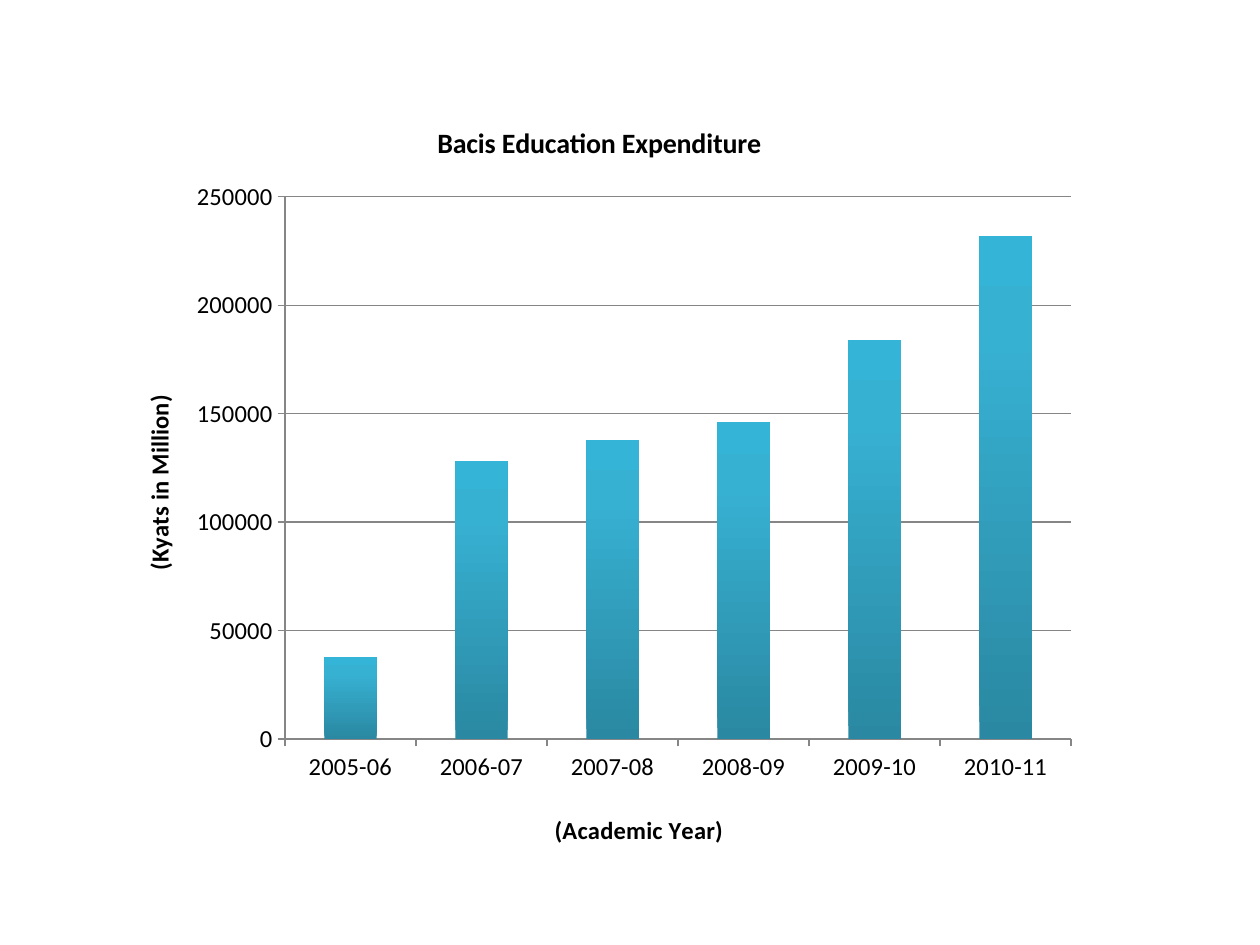
from dataclasses import dataclass

from pptx import Presentation
from pptx.chart.data import CategoryChartData
from pptx.dml.color import RGBColor
from pptx.enum.chart import XL_CHART_TYPE as ChartType, XL_TICK_MARK as TickMark
from pptx.oxml import parse_xml
from pptx.oxml.ns import nsdecls, qn
from pptx.util import Cm, Pt

FONT = "Calibri"
BLACK = RGBColor(0x00, 0x00, 0x00)
GREY = RGBColor(0x86, 0x86, 0x86)
BAR_STOPS = [
    (0, RGBColor(0x2A, 0x88, 0xA2)),
    (80, RGBColor(0x37, 0xB1, 0xD2)),
    (100, RGBColor(0x34, 0xB4, 0xD6)),
]
EXPENDITURE = {
    "2005-06": 38000,
    "2006-07": 128000,
    "2007-08": 138000,
    "2008-09": 146000,
    "2009-10": 184000,
    "2010-11": 232000,
}


@dataclass
class TitleStyle:
    """A chart or axis title; left and top are fractions of the chart."""
    text: str
    size: int
    left: float
    top: float
    rotation: int = 0


CHART_TITLE = TitleStyle("Bacis Education Expenditure", 16, 0.33, 0.04)
YEAR_TITLE = TitleStyle("(Academic Year)", 14, 0.45, 0.93)
KYATS_TITLE = TitleStyle("(Kyats in Million)", 14, 0.03, 0.39, -90)


def manual_layout(inner: bool = False, **fractions: float):
    """Build a layout element from x, y and, for a plot area, w and h."""
    target = '<c:layoutTarget val="inner"/>' if inner else ""
    modes = '<c:xMode val="edge"/><c:yMode val="edge"/>'
    places = "".join(f'<c:{key} val="{value}"/>' for key, value in fractions.items())
    return parse_xml(
        f'<c:layout {nsdecls("c")}><c:manualLayout>'
        f"{target}{modes}{places}</c:manualLayout></c:layout>"
    )


def write_title(title, style: TitleStyle) -> None:
    frame = title.text_frame
    run = frame.paragraphs[0].add_run()
    run.text = style.text
    run.font.name = FONT
    run.font.size = Pt(style.size)
    run.font.bold = True
    run.font.color.rgb = BLACK
    body = frame._txBody.find(qn("a:bodyPr"))
    body.set("rot", str(style.rotation * 60000))
    body.set("vert", "horz")
    element = title._element
    for layout in element.findall(qn("c:layout")):
        element.remove(layout)
    element.find(qn("c:tx")).addnext(manual_layout(x=style.left, y=style.top))


def format_axis(axis, style: TitleStyle) -> None:
    axis.has_title = True
    write_title(axis.axis_title, style)
    axis.major_tick_mark = TickMark.OUTSIDE
    axis.minor_tick_mark = TickMark.NONE
    axis.format.line.color.rgb = GREY
    axis.format.line.width = Pt(0.75)


def fill_bars(series) -> None:
    """Shade the bars from dark at the foot to light at the top."""
    stops = "".join(
        f'<a:gs pos="{position * 1000}"><a:srgbClr val="{color}"/></a:gs>'
        for position, color in BAR_STOPS
    )
    properties = series.format.fill._xPr
    properties.insert(0, parse_xml(
        f'<a:gradFill {nsdecls("a")} rotWithShape="1"><a:gsLst>{stops}</a:gsLst>'
        f'<a:lin ang="{270 * 60000}" scaled="0"/></a:gradFill>'
    ))


def main() -> None:
    presentation = Presentation()
    presentation.slide_width, presentation.slide_height = Cm(25.4), Cm(19.05)
    slide = presentation.slides.add_slide(presentation.slide_layouts[6])

    # Chart data and frame
    data = CategoryChartData()
    data.categories = list(EXPENDITURE)
    data.add_series("Series 1", list(EXPENDITURE.values()))
    chart = slide.shapes.add_chart(
        ChartType.COLUMN_CLUSTERED, Cm(2.18), Cm(1.78), Cm(19.81), Cm(15.62), data
    ).chart
    chart.font.name = FONT
    chart.font.size = Pt(14)
    chart.font.color.rgb = BLACK
    chart.has_legend = False
    chart.has_title = True
    write_title(chart.chart_title, CHART_TITLE)

    # Axes and gridlines
    format_axis(chart.category_axis, YEAR_TITLE)
    value_axis = chart.value_axis
    format_axis(value_axis, KYATS_TITLE)
    value_axis.minimum_scale, value_axis.maximum_scale = 0, 250000
    value_axis.major_unit = 50000
    value_axis.tick_labels.number_format = "0"
    value_axis.tick_labels.number_format_is_linked = False
    value_axis.has_major_gridlines = True
    gridline = value_axis.major_gridlines.format.line
    gridline.color.rgb = GREY
    gridline.width = Pt(0.75)

    # Columns and plot area
    plot = chart.plots[0]
    plot.gap_width = 150
    plot.vary_by_categories = False
    fill_bars(plot.series[0])
    plot_area = chart._chartSpace.chart.plotArea
    for layout in plot_area.findall(qn("c:layout")):
        plot_area.remove(layout)
    plot_area.insert(0, manual_layout(inner=True, x=0.18, y=0.14, w=0.8, h=0.7))

    presentation.save("out.pptx")


if __name__ == "__main__":
    main()
